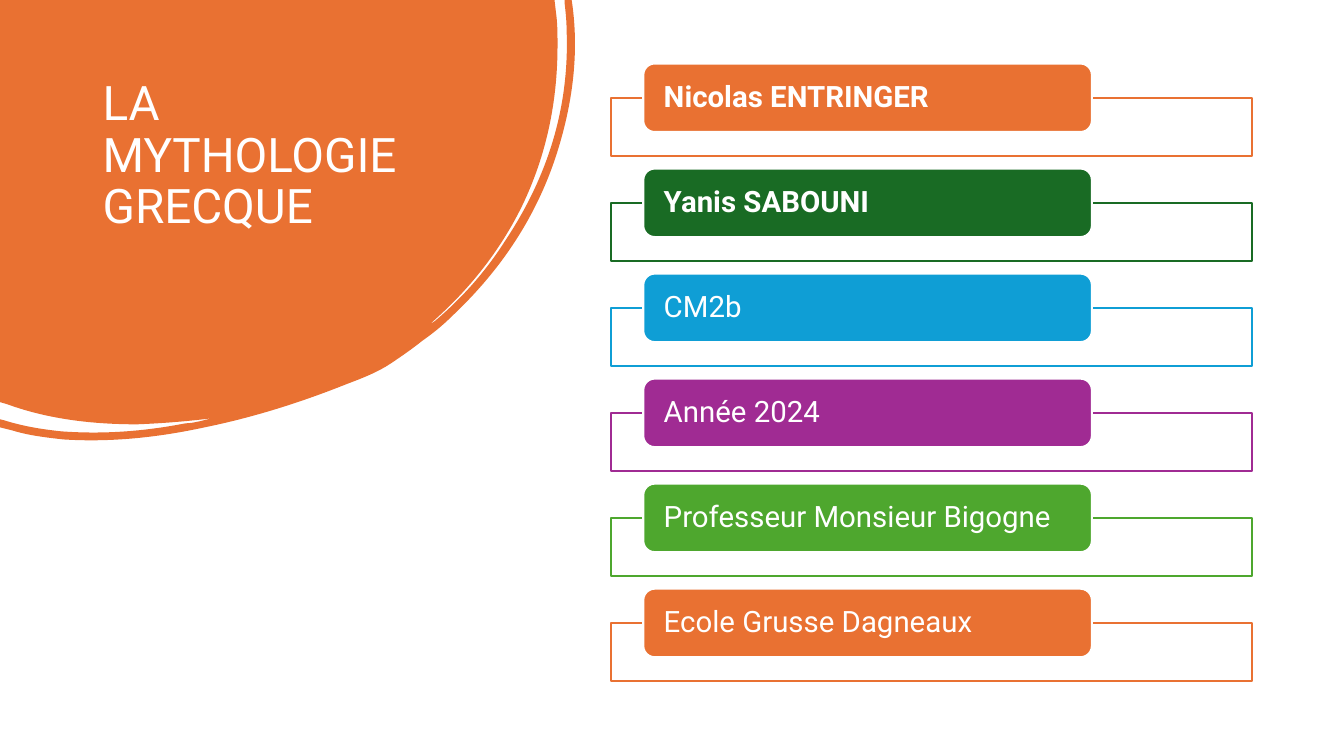
from dataclasses import dataclass

from pptx import Presentation
from pptx.dml.color import RGBColor
from pptx.enum import shapes, text
from pptx.oxml.ns import qn
from pptx.util import Inches, Pt
from lxml import etree


@dataclass(frozen=True)
class Theme:
    font: str = "Roboto"
    title_size: int = 34
    label_size: int = 21
    line_width: float = 1.5
    white: str = "FFFFFF"
    orange: str = "E97132"
    dark_green: str = "196B24"
    blue: str = "0F9ED5"
    purple: str = "A02B93"
    green: str = "4EA72E"


THEME = Theme()

TITLE = "LA MYTHOLOGIE\vGRECQUE"
LABELS = [
    ("Nicolas ENTRINGER", THEME.orange, True),
    ("Yanis SABOUNI", THEME.dark_green, True),
    ("CM2b", THEME.blue, False),
    ("Année 2024", THEME.purple, False),
    ("Professeur Monsieur Bigogne", THEME.green, False),
    ("Ecole Grusse Dagneaux", THEME.orange, False),
]
FIRST_TOP, LAST_TOP = 0.63, 5.84
FRAME_DROP = 0.34

# Each entry holds one point (straight side) or three points (cubic curve).
BLOB_SIZE = (5.71, 4.37)
BLOB_OUTLINE = [
    [(5.5, 0)],
    [(5.52, 0.17)],
    [(5.53, 0.26), (5.53, 0.36), (5.53, 0.45)],
    [(5.53, 1.01), (5.42, 1.54), (5.18, 2.04)],
    [(4.96, 2.49), (4.65, 2.88), (4.27, 3.21)],
    [(4.29, 3.21), (4.3, 3.19), (4.32, 3.18)],
    [(4.59, 2.95), (4.82, 2.69), (5.01, 2.39)],
    [(5.43, 1.76), (5.65, 1.07), (5.62, 0.3)],
    [(5.62, 0.21), (5.61, 0.12), (5.6, 0.03)],
    [(5.6, 0)],
    [(5.67, 0)],
    [(5.68, 0.07)],
    [(5.74, 0.54), (5.68, 1.02), (5.53, 1.5)],
    [(5.33, 2.14), (4.97, 2.68), (4.48, 3.14)],
    [(4.39, 3.23), (4.29, 3.31), (4.19, 3.38)],
    [(4.09, 3.46), (3.99, 3.53), (3.87, 3.61)],
    [(3.75, 3.69), (3.6, 3.75), (3.44, 3.81)],
    [(2.99, 3.99), (2.52, 4.14), (2.03, 4.24)],
    [(1.57, 4.34), (1.1, 4.39), (0.63, 4.36)],
    [(0.45, 4.34), (0.28, 4.32), (0.12, 4.27)],
    [(0, 4.24)],
    [(0, 4.16)],
    [(0.04, 4.17)],
    [(0.23, 4.23), (0.42, 4.26), (0.61, 4.28)],
    [(1.03, 4.31), (1.43, 4.28), (1.84, 4.2)],
    [(1.89, 4.2), (1.93, 4.19), (1.98, 4.18)],
    [(2.02, 4.17), (2.06, 4.16), (2.1, 4.15)],
    [(1.86, 4.18), (1.61, 4.2), (1.36, 4.21)],
    [(0.92, 4.21), (0.48, 4.16), (0.07, 4.01)],
    [(0, 3.99)],
]


def apply_format(target, values):
    for name, value in values.items():
        setattr(target, name, value)


def paint(shape, fill, line=None):
    shape.shadow.inherit = False
    shape.fill.solid()
    shape.fill.fore_color.rgb = RGBColor.from_string(fill)
    if line is None:
        shape.line.fill.background()
    else:
        shape.line.color.rgb = RGBColor.from_string(line)
        shape.line.width = Pt(THEME.line_width)


def set_opacity(shape, percent):
    color = shape.fill._xPr.find(qn("a:solidFill"))[0]
    etree.SubElement(color, qn("a:alpha")).set("val", str(percent * 1000))


def write(shape, words, size, bold=False, **frame_format):
    frame = shape.text_frame
    apply_format(frame, {"word_wrap": True, **frame_format})
    para = frame.paragraphs[0]
    para.text = words
    apply_format(para, {"alignment": text.PP_ALIGN.LEFT, "line_spacing": 0.9})
    for span in para.runs:
        apply_format(span.font, {"name": THEME.font, "size": Pt(size), "bold": bold})
        span.font.color.rgb = RGBColor.from_string(THEME.white)


def to_emu(point):
    return tuple(Inches(value) for value in point)


def bend_sides(shape, outline):
    """Turn the straight sides that have control points into cubic curves."""
    for side, node in zip(outline, list(shape._element.iter(qn("a:lnTo")))):
        if len(side) == 3:
            node.tag = qn("a:cubicBezTo")
            for index, control in enumerate(side[:-1]):
                x, y = to_emu(control)
                point = etree.Element(qn("a:pt"), x=str(x), y=str(y))
                node.insert(index, point)


def add_blob(page):
    builder = page.shapes.build_freeform(0, 0, scale=1.0)
    builder.add_line_segments([to_emu(side[-1]) for side in BLOB_OUTLINE], close=True)
    blob = builder.convert_to_shape()
    bend_sides(blob, BLOB_OUTLINE)
    width, height = to_emu(BLOB_SIZE)
    apply_format(blob, {"width": width, "height": height})
    for outline in blob._element.iter(qn("a:path")):
        outline.set("w", str(width))
        outline.set("h", str(height))
    paint(blob, THEME.orange)


def add_title(page):
    box = page.shapes.add_textbox(Inches(0.92), Inches(0.74), Inches(3.52), Inches(2.22))
    write(box, TITLE, THEME.title_size)


def add_label(page, top, words, color, bold):
    """Draw an outlined frame with a coloured tab over its upper edge."""
    frame = page.shapes.add_shape(shapes.MSO_SHAPE.RECTANGLE, Inches(6.06),
                                  Inches(top + FRAME_DROP), Inches(6.36), Inches(0.58))
    paint(frame, THEME.white, color)
    set_opacity(frame, 90)
    tab = page.shapes.add_shape(shapes.MSO_SHAPE.ROUNDED_RECTANGLE, Inches(6.38),
                                Inches(top), Inches(4.45), Inches(0.68))
    paint(tab, color, THEME.white)
    write(tab, words, THEME.label_size, bold,
          vertical_anchor=text.MSO_ANCHOR.MIDDLE,
          margin_left=Inches(0.17), margin_right=Inches(0.17),
          margin_top=0, margin_bottom=0)


def main():
    deck = Presentation()
    apply_format(deck, {"slide_width": Inches(13.33), "slide_height": Inches(7.5)})
    page = deck.slides.add_slide(deck.slide_layouts[6])
    add_blob(page)
    add_title(page)
    pitch = (LAST_TOP - FIRST_TOP) / (len(LABELS) - 1)
    for row, label in enumerate(LABELS):
        add_label(page, FIRST_TOP + row * pitch, *label)
    deck.save("out.pptx")


if __name__ == "__main__":
    main()
